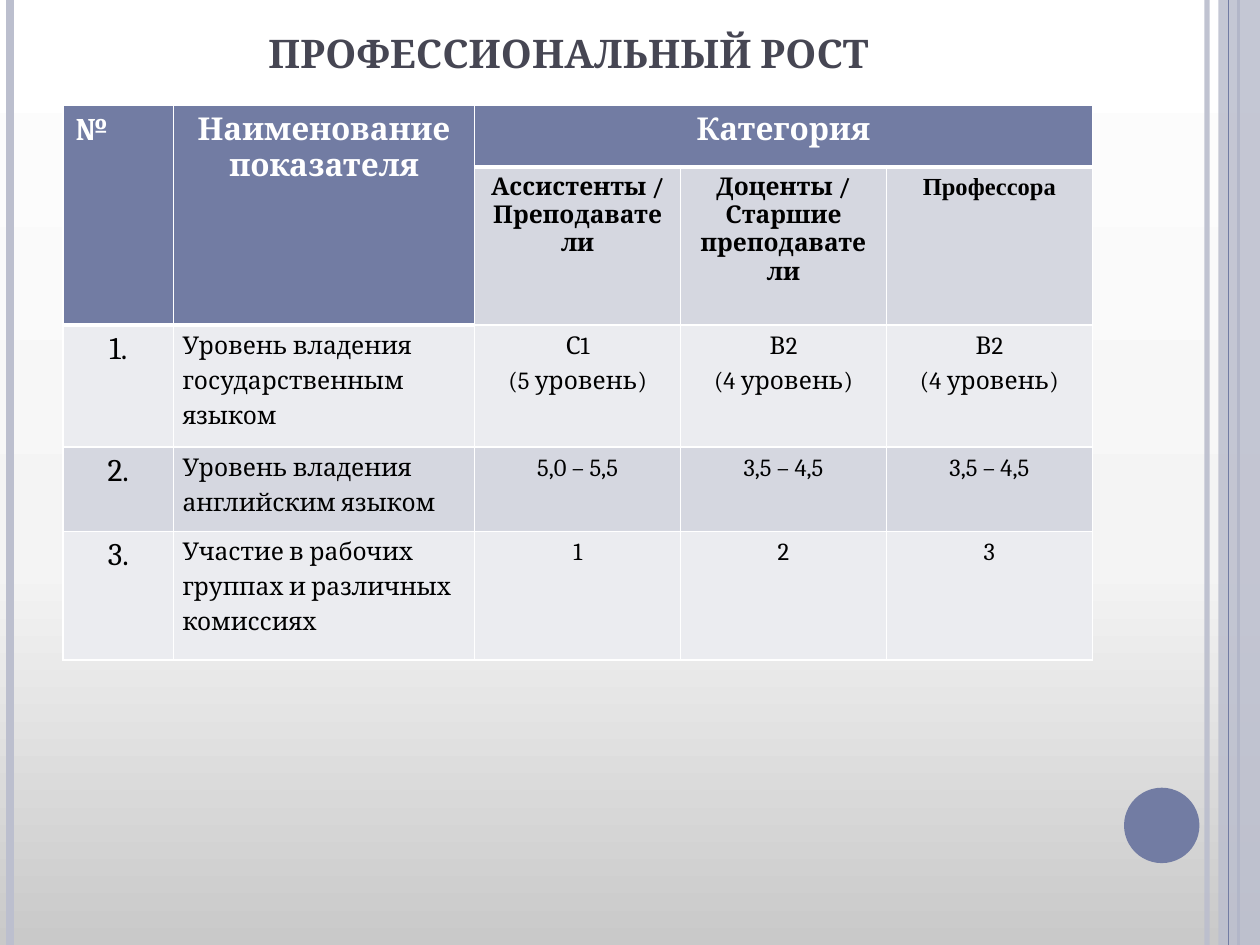
from copy import deepcopy
from dataclasses import dataclass

from lxml import etree
from pptx import Presentation
from pptx.dml.color import RGBColor
from pptx.enum.shapes import MSO_CONNECTOR, MSO_SHAPE
from pptx.enum.text import MSO_ANCHOR, PP_ALIGN
from pptx.oxml.ns import qn
from pptx.util import Cm, Pt

STRAIGHT = MSO_CONNECTOR.STRAIGHT
RECTANGLE, OVAL = MSO_SHAPE.RECTANGLE, MSO_SHAPE.OVAL
LEFT, CENTER = PP_ALIGN.LEFT, PP_ALIGN.CENTER
BOTTOM = MSO_ANCHOR.BOTTOM


@dataclass(frozen=True)
class Theme:
    font: str = "Cambria"
    alternate_font: str = "Times New Roman"
    title: str = "464653"
    accent: str = "727CA3"
    stripe: str = "BCBFCE"
    band_dark: str = "D5D7E0"
    band_light: str = "EBECF0"
    white: str = "FFFFFF"
    black: str = "000000"
    background: tuple = ((0, "C9C9C9"), (0.4, "F4F4F4"), (1, "FFFFFF"))
    title_size: float = 22.5
    large_size: int = 18
    body_size: int = 14


@dataclass(frozen=True)
class Stripe:
    x: float
    color: str
    width: float
    opacity: int = 100


@dataclass(frozen=True)
class CellStyle:
    fill: str
    color: str = "000000"
    size: float = 14
    bold: bool = False
    font: str = "Cambria"
    align: PP_ALIGN = CENTER
    spaced: bool = False


THEME = Theme()
SLIDE_WIDTH, SLIDE_HEIGHT = 25.4, 19.05
STRIPES_BEHIND = [Stripe(24.33, THEME.stripe, 3, 93), Stripe(0.2, THEME.stripe, 4.5),
                  Stripe(24.97, THEME.accent, 1.5)]
STRIPE_IN_FRONT = Stripe(24.77, THEME.accent, 0.75)
COLUMN_WIDTHS = [2.23, 6.07, 4.15, 4.15, 4.15]
ROW_HEIGHTS = [1.24, 3.18, 2.46, 1.7, 2.59]
CATEGORIES = ["Ассистенты / Преподаватели", "Доценты / Старшие преподаватели", "Профессора"]
INDICATORS = [
    ("Уровень владения государственным языком",
     "С1\n(5 уровень)", "В2\n(4 уровень)", "В2\n(4 уровень)"),
    ("Уровень владения английским языком", "5,0 – 5,5", "3,5 – 4,5", "3,5 – 4,5"),
    ("Участие в рабочих группах и различных комиссиях", "1", "2", "3"),
]


def rgb(color: str) -> RGBColor:
    return RGBColor.from_string(color)


def set_opacity(element, percent: int) -> None:
    color = element.find(".//" + qn("a:srgbClr"))
    etree.SubElement(color, qn("a:alpha"), val=str(percent * 1000))


def paint_background(slide) -> None:
    fill = slide.background.fill
    fill.gradient()
    fill.gradient_angle = 90
    stop_list = slide.element.find(".//" + qn("a:gsLst"))
    stop_list.insert(1, deepcopy(stop_list[0]))
    for stop, (position, color) in zip(fill.gradient_stops, THEME.background):
        stop.position = position
        stop.color.rgb = rgb(color)


def add_stripe(slide, stripe: Stripe) -> None:
    connector = slide.shapes.add_connector(
        STRAIGHT, Cm(stripe.x), Cm(0), Cm(stripe.x), Cm(SLIDE_HEIGHT))
    connector.line.color.rgb = rgb(stripe.color)
    connector.line.width = Pt(stripe.width)
    properties = connector.element.spPr
    if stripe.opacity < 100:
        set_opacity(properties, stripe.opacity)
    etree.SubElement(properties, qn("a:effectLst"))


def add_filled_shape(slide, kind: MSO_SHAPE, left: float, top: float,
                     width: float, height: float, color: str):
    shape = slide.shapes.add_shape(kind, Cm(left), Cm(top), Cm(width), Cm(height))
    shape.shadow.inherit = False
    shape.fill.solid()
    shape.fill.fore_color.rgb = rgb(color)
    shape.line.fill.background()
    return shape


def format_run(run, font: str, size: float, color: str, bold: bool) -> None:
    run.font.name = font
    run.font.size = Pt(size)
    run.font.color.rgb = rgb(color)
    run.font.bold = bold


def add_title(slide, text: str) -> None:
    box = slide.shapes.add_textbox(Cm(1.27), Cm(0.76), Cm(20.75), Cm(1.96))
    frame = box.text_frame
    frame.word_wrap = True
    frame.vertical_anchor = BOTTOM
    frame.margin_right, frame.margin_bottom = Cm(0.6), Cm(1.17)
    frame.text = text
    paragraph = frame.paragraphs[0]
    paragraph.alignment = CENTER
    format_run(paragraph.runs[0], THEME.font, THEME.title_size, THEME.title, True)


def set_borders(cell, top: float, bottom: float) -> None:
    properties = cell._tc.get_or_add_tcPr()
    widths = {"a:lnL": 1, "a:lnR": 1, "a:lnT": top, "a:lnB": bottom}
    for index, (tag, width) in enumerate(widths.items()):
        line = etree.Element(qn(tag), w=str(Pt(width)))
        fill = etree.SubElement(line, qn("a:solidFill"))
        etree.SubElement(fill, qn("a:srgbClr"), val=THEME.white)
        properties.insert(index, line)


def fill_cell(cell, text: str, style: CellStyle) -> None:
    cell.fill.solid()
    cell.fill.fore_color.rgb = rgb(style.fill)
    if style.spaced:
        cell.margin_left = cell.margin_right = Cm(0.18)
        cell.margin_top = cell.margin_bottom = Cm(0)
    cell.text_frame.text = text
    for paragraph in cell.text_frame.paragraphs:
        paragraph.alignment = style.align
        if style.spaced:
            paragraph.line_spacing = 1.25
        for run in paragraph.runs:
            format_run(run, style.font, style.size, style.color, style.bold)


def add_indicator_table(slide) -> None:
    table = slide.shapes.add_table(
        len(ROW_HEIGHTS), len(COLUMN_WIDTHS), Cm(1.27), Cm(2.13),
        Cm(sum(COLUMN_WIDTHS)), Cm(sum(ROW_HEIGHTS))).table
    for column, width in zip(table.columns, COLUMN_WIDTHS):
        column.width = Cm(width)
    for row, height in zip(table.rows, ROW_HEIGHTS):
        row.height = Cm(height)

    for row in range(len(ROW_HEIGHTS)):
        for column in range(len(COLUMN_WIDTHS)):
            last_header_row = 1 if column < 2 else 0
            set_borders(table.cell(row, column),
                        top=3 if row == last_header_row + 1 else 1,
                        bottom=3 if row == last_header_row else 1)
    for column in (0, 1):
        table.cell(0, column).merge(table.cell(1, column))
    table.cell(0, 2).merge(table.cell(0, 4))

    headers = [("№", LEFT), ("Наименование показателя", CENTER), ("Категория", CENTER)]
    for column, (text, align) in enumerate(headers):
        fill_cell(table.cell(0, column), text, CellStyle(
            THEME.accent, THEME.white, THEME.large_size, True, align=align))
    for column, text in enumerate(CATEGORIES, start=2):
        is_last = column == len(COLUMN_WIDTHS) - 1
        fill_cell(table.cell(1, column), text, CellStyle(
            THEME.band_dark, THEME.black, THEME.body_size, True,
            THEME.alternate_font if is_last else THEME.font, spaced=is_last))
    for number, (name, *values) in enumerate(INDICATORS, start=1):
        row = number + 1
        band = THEME.band_light if number % 2 else THEME.band_dark
        fill_cell(table.cell(row, 0), f"{number}.", CellStyle(band, size=THEME.large_size))
        fill_cell(table.cell(row, 1), name, CellStyle(band, align=LEFT, spaced=True))
        for column, value in enumerate(values, start=2):
            fill_cell(table.cell(row, column), value, CellStyle(band, spaced=True))


def main() -> None:
    presentation = Presentation()
    presentation.slide_width, presentation.slide_height = Cm(SLIDE_WIDTH), Cm(SLIDE_HEIGHT)
    slide = presentation.slides.add_slide(presentation.slide_layouts[6])
    paint_background(slide)
    for stripe in STRIPES_BEHIND:
        add_stripe(slide, stripe)
    side_band = add_filled_shape(slide, RECTANGLE, 24.56, 0, 0.84, SLIDE_HEIGHT, THEME.stripe)
    set_opacity(side_band.element.spPr, 87)
    add_stripe(slide, STRIPE_IN_FRONT)
    add_filled_shape(slide, OVAL, 22.66, 15.88, 1.52, 1.52, THEME.accent)
    add_title(slide, "ПРОФЕССИОНАЛЬНЫЙ РОСТ")
    add_indicator_table(slide)
    presentation.save("out.pptx")


if __name__ == "__main__":
    main()
